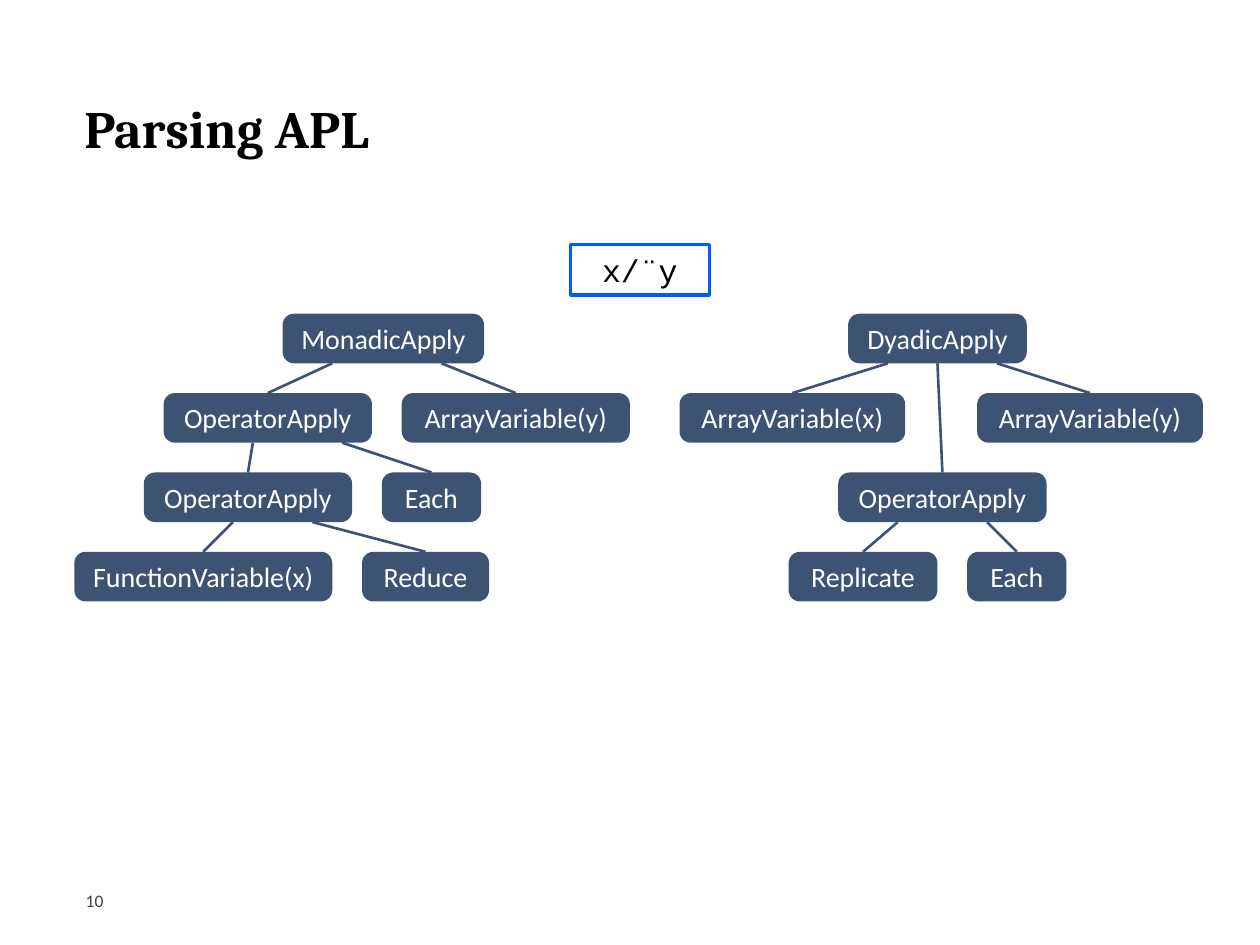
"""Build a slide showing the two parse trees of one APL expression."""
from typing import NamedTuple

import pptx
import pptx.dml.color
import pptx.enum.shapes
import pptx.enum.text
import pptx.oxml.ns
import pptx.util
from lxml import etree

COLORS = {
    "title": "000000",
    "number": "414141",
    "paper": "FFFFFF",
    "frame": "025BFF",
    "node": "3D5374",
}
SLIDE_WIDTH, SLIDE_HEIGHT = 10, 7.5
GRID_LEFT, GRID_TOP = 0.59, 2.49
COLUMN = 0.2 / 2.54
ROW = 8 * COLUMN
NODE_HEIGHT = 5 * COLUMN


class Node(NamedTuple):
    """A tree node on the grid, with (start column, child) branches."""
    label: str
    row: int
    column: float
    width: float
    branches: tuple = ()


MONADIC_TREE = Node("MonadicApply", 0, 21, 20.3, (
    (5, Node("OperatorApply", 1, 9, 21, (
        (9, Node("OperatorApply", 2, 7, 21, (
            (9, Node("FunctionVariable(x)", 3, 0, 26)),
            (17, Node("Reduce", 3, 29, 12.8)),
        ))),
        (18, Node("Each", 2, 31, 10)),
    ))),
    (16, Node("ArrayVariable(y)", 1, 33, 23)),
))
DYADIC_TREE = Node("DyadicApply", 0, 78, 18, (
    (4, Node("ArrayVariable(x)", 1, 61, 22.75)),
    (9, Node("OperatorApply", 2, 77, 21, (
        (6, Node("Replicate", 3, 72, 15)),
        (15, Node("Each", 3, 90, 10)),
    ))),
    (15, Node("ArrayVariable(y)", 1, 91, 22.75)),
))


def color(name):
    """Return the named palette colour."""
    return pptx.dml.color.RGBColor.from_string(COLORS[name])


def inches(*lengths):
    """Convert lengths in inches."""
    return [pptx.util.Inches(length) for length in lengths]


def share(left, top, width, height):
    """Convert shares of the slide's size to a position and size."""
    return inches(left * SLIDE_WIDTH, top * SLIDE_HEIGHT,
                  width * SLIDE_WIDTH, height * SLIDE_HEIGHT)


def write(shape, text, font, size, color_name, inset=(0, 0), spacing=None, bold=False):
    """Put one formatted paragraph in a shape and return it."""
    frame = shape.text_frame
    frame.word_wrap = True
    frame.margin_left = frame.margin_right = pptx.util.Inches(inset[0])
    frame.margin_top = frame.margin_bottom = pptx.util.Inches(inset[1])
    frame.vertical_anchor = pptx.enum.text.MSO_ANCHOR.TOP
    frame.text = text
    paragraph = frame.paragraphs[0]
    paragraph.alignment = pptx.enum.text.PP_ALIGN.LEFT
    if spacing:
        paragraph.line_spacing = pptx.util.Pt(spacing)
    run_font = paragraph.runs[0].font
    run_font.name = font
    run_font.size = pptx.util.Pt(size)
    run_font.bold = bold
    run_font.color.rgb = color(color_name)
    return paragraph


def add_box(slide, preset, place, fill):
    """Add a filled preset shape without a shadow."""
    box = slide.shapes.add_shape(preset, *place)
    box.shadow.inherit = False
    box.fill.solid()
    box.fill.fore_color.rgb = color(fill)
    return box


def add_expression(slide, code):
    """Add the framed APL expression."""
    expression = add_box(slide, pptx.enum.shapes.MSO_SHAPE.RECTANGLE,
                         share(0.453, 0.2587, 0.11, 0.0533), "paper")
    expression.line.color.rgb = color("frame")
    expression.line.width = pptx.util.Pt(2)
    write(expression, code, "Courier New", 18, "title", (0.1, 0.05))


def add_node(slide, node):
    """Add one rounded tree node."""
    place = inches(GRID_LEFT + node.column * COLUMN, GRID_TOP + node.row * ROW,
                   node.width * COLUMN, NODE_HEIGHT)
    box = add_box(slide, pptx.enum.shapes.MSO_SHAPE.ROUNDED_RECTANGLE, place, "node")
    box.adjustments[0] = 0.225
    box.line.fill.background()
    label = write(box, node.label, "Calibri", 16, "paper", (0.12, 0.12), 19)
    label.alignment = pptx.enum.text.PP_ALIGN.CENTER
    box.text_frame.vertical_anchor = pptx.enum.text.MSO_ANCHOR.MIDDLE
    return box


def add_branch(slide, parent_box, start, child_box):
    """Join a parent's lower edge to the top middle of its child."""
    start_x = parent_box.left + pptx.util.Inches(start * COLUMN)
    branch = slide.shapes.add_connector(
        pptx.enum.shapes.MSO_CONNECTOR.STRAIGHT,
        start_x, parent_box.top + parent_box.height,
        child_box.left + child_box.width // 2, child_box.top)
    if abs(start_x - parent_box.left - parent_box.width / 2) < pptx.util.Pt(1):
        branch.begin_connect(parent_box, 2)
    branch.end_connect(child_box, 0)
    branch.line.color.rgb = color("node")
    branch.line.width = pptx.util.Pt(1.5)
    etree.SubElement(branch._element.spPr, pptx.oxml.ns.qn("a:effectLst"))


def add_tree(slide, node):
    """Add a node with everything below it and return its box."""
    box = add_node(slide, node)
    for start, child in node.branches:
        add_branch(slide, box, start, add_tree(slide, child))
    return box


def main():
    """Build and save the slide."""
    deck = pptx.Presentation()
    deck.slide_width, deck.slide_height = inches(SLIDE_WIDTH, SLIDE_HEIGHT)
    slide = deck.slides.add_slide(deck.slide_layouts[6])
    title = slide.shapes.add_textbox(*share(0.067, 0.1067, 0.866, 0.112))
    write(title, "Parsing APL", "Cambria", 30, "title", spacing=33, bold=True)
    page_number = slide.shapes.add_textbox(*share(0.068, 0.9413, 0.081, 0.0267))
    write(page_number, "10", "Calibri", 10, "number", spacing=12)
    add_expression(slide, " x/¨y")
    for tree in (MONADIC_TREE, DYADIC_TREE):
        add_tree(slide, tree)
    deck.save("out.pptx")


if __name__ == "__main__":
    main()
